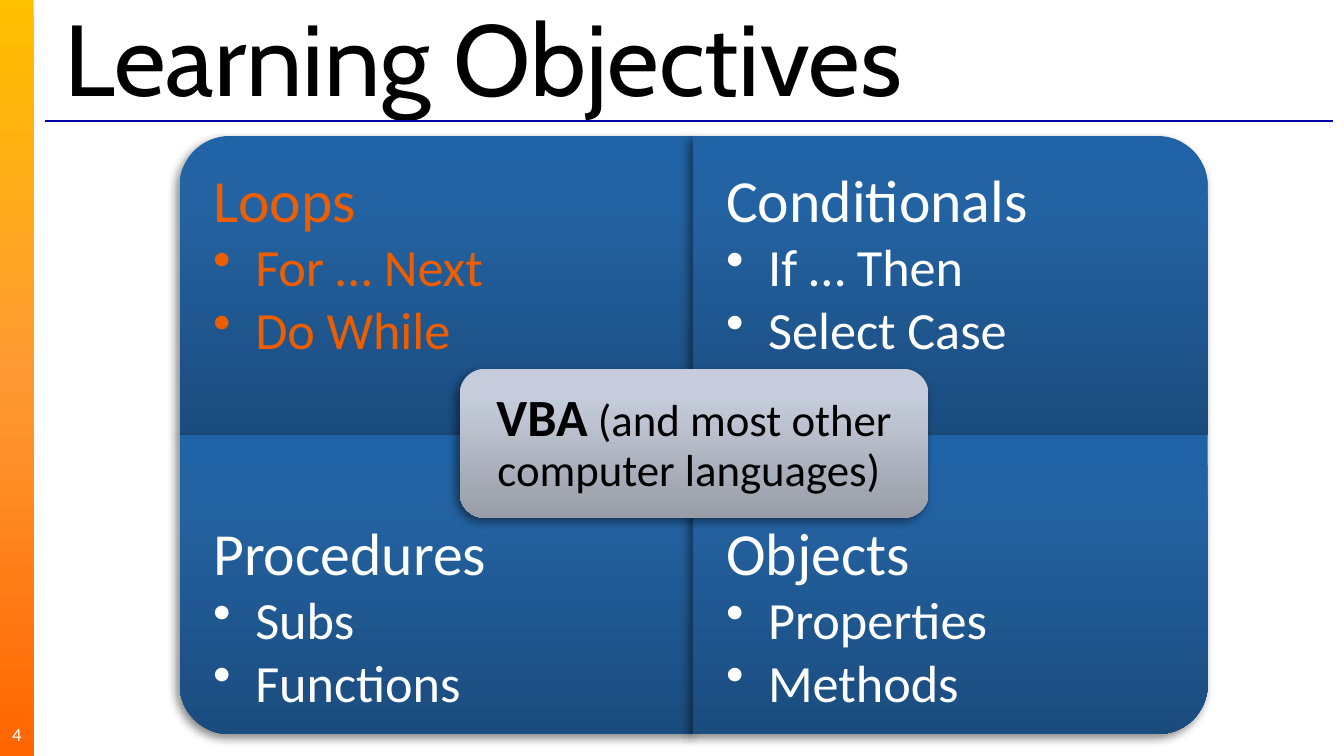
from dataclasses import dataclass
from math import cos, radians, sin

from lxml.etree import SubElement
from pptx import Presentation
from pptx.dml.color import RGBColor
from pptx.enum.shapes import MSO_CONNECTOR, MSO_SHAPE
from pptx.enum.text import MSO_ANCHOR, MSO_AUTO_SIZE, PP_ALIGN
from pptx.oxml.ns import qn
from pptx.util import Pt


@dataclass(frozen=True)
class Theme:
    """Colours, gradients from top to bottom, fonts and type sizes."""
    black: str = "000000"
    white: str = "FFFFFF"
    highlight: str = "EC5E00"
    rule: str = "0000A5"
    bar: tuple = ((0, "FFC000"), (50, "FF9933"), (100, "FF6600"))
    panel: tuple = ((0, "2063A6"), (20, "2363A3"), (100, "1B4C7E"))
    hub: tuple = ((0, "C6CCDB"), (20, "C5CCD9"), (100, "989DA7"))
    title_font: str = "Cabin"
    body_font: str = "Calibri"
    title_size: int = 54
    heading_size: int = 32
    bullet_size: int = 28
    hub_size: int = 24
    number_size: int = 10


THEME = Theme()
PANEL_LEFT, PANEL_TOP = 96.25, 72.9
PANEL_WIDTH, PANEL_HEIGHT = 276, 160.2
COLUMN_STEP = 274.75
CORNER_RADIUS = 26.7
PANELS = (
    ("Loops", ("For … Next", "Do While"), THEME.highlight, 0, 0, 0),
    ("Conditionals", ("If … Then", "Select Case"), THEME.white, 1, 0, 1),
    ("Procedures", ("Subs", "Functions"), THEME.white, 0, 1, 3),
    ("Objects", ("Properties", "Methods"), THEME.white, 1, 1, 2),
)


def add_text(paragraph, text, size, color=THEME.white, font=THEME.body_font,
             bold=False, align=PP_ALIGN.LEFT):
    """Add a formatted run to a paragraph."""
    paragraph.alignment = align
    run = paragraph.add_run()
    run.text = text
    run.font.size = Pt(size)
    run.font.name = font
    run.font.bold = bold
    run.font.color.rgb = RGBColor.from_string(color)


def add_bullet(text_frame, text, size, color):
    """Add a bulleted paragraph with a hanging indent."""
    paragraph = text_frame.add_paragraph()
    paragraph.level = 1
    properties = paragraph._p.get_or_add_pPr()
    properties.set("marL", str(Pt(22.5)))
    properties.set("indent", str(-Pt(22.5)))
    SubElement(properties, qn("a:buChar"), char="•")
    add_text(paragraph, text, size, color)


def set_frame(shape, margins, anchor=MSO_ANCHOR.TOP):
    """Set wrapping, anchor and margins, and return the text frame."""
    frame = shape.text_frame
    frame.word_wrap = True
    frame.auto_size = MSO_AUTO_SIZE.NONE
    frame.vertical_anchor = anchor
    (frame.margin_left, frame.margin_top,
     frame.margin_right, frame.margin_bottom) = map(Pt, margins)
    return frame


def set_gradient(shape, stops):
    """Fill a shape from top to bottom and remove its line and shadow."""
    shape.fill.gradient()
    gradient = shape._element.spPr.find(qn("a:gradFill"))
    for child in list(gradient):
        gradient.remove(child)
    stop_list = SubElement(gradient, qn("a:gsLst"))
    for position, color in stops:
        stop = SubElement(stop_list, qn("a:gs"), pos=str(position * 1000))
        SubElement(stop, qn("a:srgbClr"), val=color)
    SubElement(gradient, qn("a:lin"), ang="5400000", scaled="0")
    shape.line.fill.background()
    shape.shadow.inherit = False


def add_shadow(shape):
    """Give a shape a soft shadow towards the lower left."""
    effects = shape._element.spPr.find(qn("a:effectLst"))
    shadow = SubElement(effects, qn("a:outerShdw"), blurRad=str(Pt(5)),
                        dist=str(Pt(3)), dir="8100000", rotWithShape="0")
    color = SubElement(shadow, qn("a:srgbClr"), val=THEME.black)
    SubElement(color, qn("a:alpha"), val="45000")


def panel_outline(left, top, rounded):
    """Return outline points with one rounded corner, clockwise from top left."""
    right, bottom = left + PANEL_WIDTH, top + PANEL_HEIGHT
    points = [(left, top), (right, top), (right, bottom), (left, bottom)]
    x, y = points[rounded]
    center_x = x + CORNER_RADIUS * (1 if x == left else -1)
    center_y = y + CORNER_RADIUS * (1 if y == top else -1)
    angles = [radians(180 + 90 * rounded + step) for step in range(0, 91, 5)]
    points[rounded:rounded + 1] = [
        (center_x + CORNER_RADIUS * cos(angle), center_y + CORNER_RADIUS * sin(angle))
        for angle in angles]
    return [(Pt(x), Pt(y)) for x, y in points]


def add_panel(slide, heading, bullets, color, column, row, rounded):
    """Add one quadrant with a heading and bullets."""
    start, *others = panel_outline(PANEL_LEFT + column * COLUMN_STEP,
                                   PANEL_TOP + row * PANEL_HEIGHT, rounded)
    builder = slide.shapes.build_freeform(*start, scale=1.0)
    builder.add_line_segments(others, close=True)
    shape = builder.convert_to_shape()
    set_gradient(shape, THEME.panel)
    add_shadow(shape)
    frame = set_frame(shape, (18, 43.2, 18, 18) if row else (18, 14.4, 18, 57.6))
    add_text(frame.paragraphs[0], heading, THEME.heading_size, color)
    for bullet in bullets:
        add_bullet(frame, bullet, THEME.bullet_size, color)


def add_hub(slide):
    """Add the central label over the quadrants."""
    shape = slide.shapes.add_shape(MSO_SHAPE.ROUNDED_RECTANGLE,
                                   Pt(246.2), Pt(197.6), Pt(251.3), Pt(79.8))
    shape.adjustments[0] = 0.17
    set_gradient(shape, THEME.hub)
    add_shadow(shape)
    paragraph = set_frame(shape, (8, 8, 8, 8), MSO_ANCHOR.MIDDLE).paragraphs[0]
    paragraph.line_spacing = 0.9
    add_text(paragraph, "VBA", THEME.bullet_size, THEME.black, bold=True,
             align=PP_ALIGN.CENTER)
    add_text(paragraph, " (and most other computer languages) ", THEME.hub_size,
             THEME.black, align=PP_ALIGN.CENTER)


def add_frame(slide):
    """Add the side bar, the rule under the title and the slide number."""
    bar = slide.shapes.add_shape(MSO_SHAPE.RECTANGLE, 0, 0, Pt(18), Pt(405))
    set_gradient(bar, THEME.bar)
    rule = slide.shapes.add_connector(MSO_CONNECTOR.STRAIGHT,
                                      Pt(24), Pt(64.8), Pt(714), Pt(64.8))
    rule.line.color.rgb = RGBColor.from_string(THEME.rule)
    rule.line.width = Pt(0.75)
    SubElement(rule._element.spPr, qn("a:effectLst"))
    number = slide.shapes.add_textbox(0, Pt(382.5), Pt(18), Pt(21.5))
    frame = set_frame(number, (0, 0, 0, 0), MSO_ANCHOR.MIDDLE)
    add_text(frame.paragraphs[0], "4", THEME.number_size, align=PP_ALIGN.CENTER)


def add_title(slide, text):
    """Place and format the title placeholder."""
    title = slide.shapes.title
    title.left, title.top, title.width, title.height = map(Pt, (27.4, 10.8, 690, 38.2))
    frame = set_frame(title, (7.2, 3.6, 7.2, 3.6), MSO_ANCHOR.MIDDLE)
    add_text(frame.paragraphs[0], text, THEME.title_size, THEME.black, THEME.title_font)


def main():
    """Build the slide and save it."""
    presentation = Presentation()
    presentation.slide_width, presentation.slide_height = Pt(720), Pt(405)
    slide = presentation.slides.add_slide(presentation.slide_layouts[5])
    add_frame(slide)
    add_title(slide, "Learning Objectives")
    for panel in PANELS:
        add_panel(slide, *panel)
    add_hub(slide)
    presentation.save("out.pptx")


if __name__ == "__main__":
    main()
